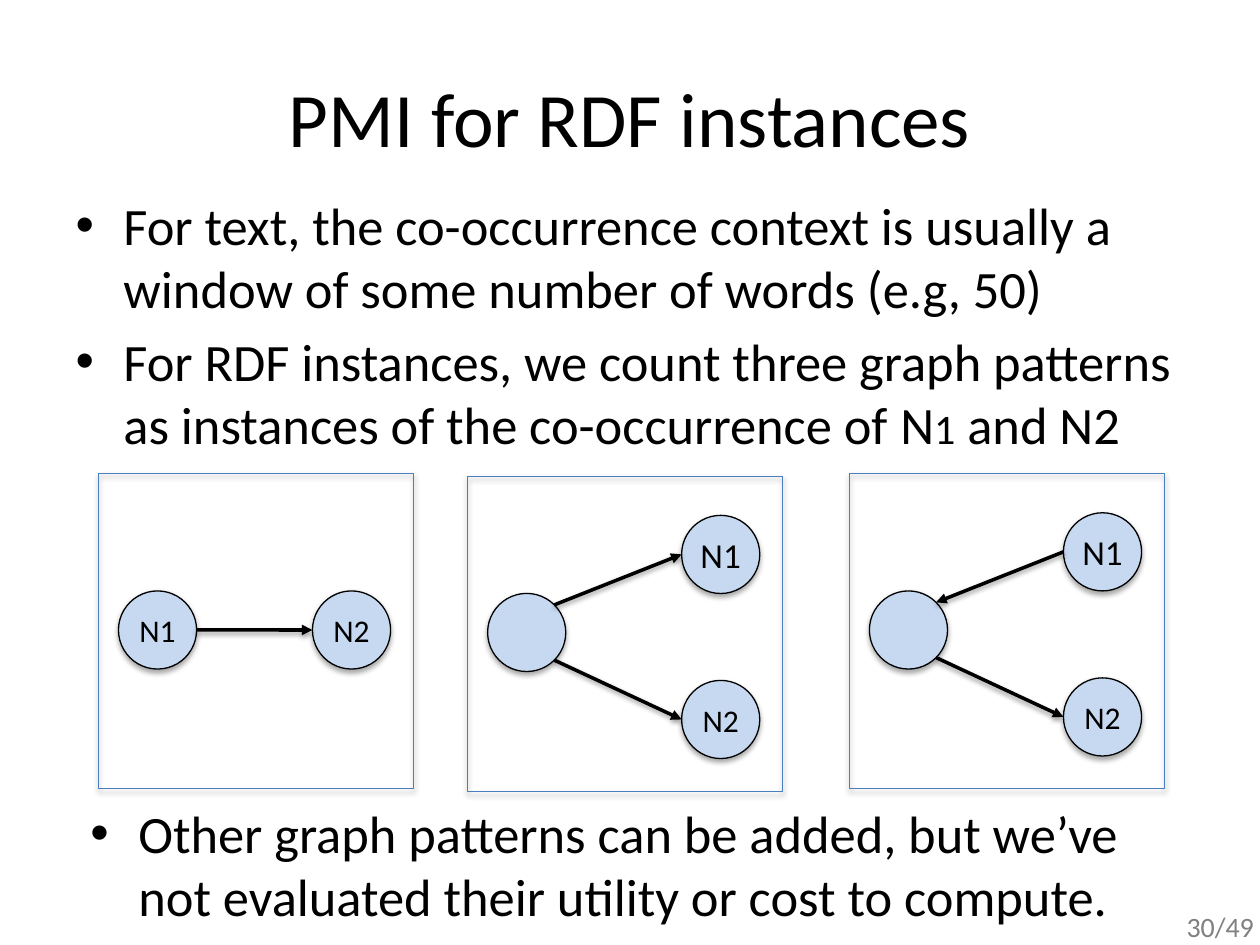
"""Build a slide on PMI graph patterns for RDF instances."""
import math

import lxml.etree
import pptx
import pptx.dml.color
import pptx.enum.shapes
import pptx.enum.text
import pptx.oxml.ns
import pptx.util

Inches, Pt = pptx.util.Inches, pptx.util.Pt
SHAPE = pptx.enum.shapes.MSO_SHAPE
ALIGN = pptx.enum.text.PP_ALIGN
ANCHOR = pptx.enum.text.MSO_ANCHOR
qn = pptx.oxml.ns.qn

THEME = {
    "font": "Calibri", "ink": "000000", "grey": "808080", "node": "C6D9F1", "frame": "4B7EBC",
    "title": 44, "body": 30, "label": 18, "large_label": 20, "page": 16,
    "thin": 0.75, "arrow": 2, "indent": 0.38,
}

TITLE = "PMI for RDF instances"
BULLETS = [
    [("For text, the co-occurrence context is usually a window of some number of words (e.g, 50)", False)],
    [("For RDF instances, we count three graph patterns as instances of the co-occurrence of ", False),
     ("N1", True), (" and N2", False)],
]
CLOSING = [[("Other graph patterns can be added, but we’ve not evaluated their utility or cost to compute.", False)]]
PAGE = "30/49"

PANEL, NODE = 2.5, 0.62
LEFT, RIGHT = 0.16, 1.7
TOP, MIDDLE, BOTTOM = 0.31, 0.93, 1.62
FORK = {"hub": (LEFT, MIDDLE, "", "label"), "N1": (RIGHT, TOP, "N1", "large_label"),
        "N2": (RIGHT, BOTTOM, "N2", "label")}
PAIR = {"N1": (LEFT, MIDDLE, "N1", "label"), "N2": (RIGHT, MIDDLE, "N2", "label")}
HUB_UP, HUB_DOWN, N1_IN, N2_IN = ("hub", -45), ("hub", 45), ("N1", 180), ("N2", 180)
PATTERNS = [
    (0.78, 3.76, PAIR, [(("N1", 0), N2_IN)]),
    (3.71, 3.78, FORK, [(HUB_UP, N1_IN), (HUB_DOWN, N2_IN)]),
    (6.74, 3.76, FORK, [(N1_IN, HUB_UP), (HUB_DOWN, N2_IN)]),
]


def color(name):
    return pptx.dml.color.RGBColor.from_string(THEME[name])


def add_run(paragraph, text, size, ink="ink"):
    run = paragraph.add_run()
    run.text = text
    for name, value in {"name": THEME["font"], "size": Pt(THEME[size])}.items():
        setattr(run.font, name, value)
    run.font.color.rgb = color(ink)
    return run


def place(shape, *box):
    for name, value in zip(("left", "top", "width", "height"), box):
        setattr(shape, name, Inches(value))


def fill_bullets(frame, items):
    frame.word_wrap = True
    frame.auto_size = pptx.enum.text.MSO_AUTO_SIZE.NONE
    for index, runs in enumerate(items):
        paragraph = frame.paragraphs[0] if index == 0 else frame.add_paragraph()
        properties = paragraph._p.get_or_add_pPr()
        indent = Inches(THEME["indent"])
        properties.set("marL", str(indent))
        properties.set("indent", str(-indent))
        before = lxml.etree.SubElement(properties, qn("a:spcBef"))
        lxml.etree.SubElement(before, qn("a:spcPct")).set("val", "20000")
        lxml.etree.SubElement(properties, qn("a:buFont")).set("typeface", "Arial")
        lxml.etree.SubElement(properties, qn("a:buChar")).set("char", "•")
        for text, small_caps in runs:
            run = add_run(paragraph, text, "body")
            if small_caps:
                run._r.get_or_add_rPr().set("cap", "small")


def add_shadow(shape, distance, opacity):
    effects = lxml.etree.SubElement(shape._element.spPr, qn("a:effectLst"))
    shadow = lxml.etree.SubElement(effects, qn("a:outerShdw"), blurRad=str(Pt(3.1)),
                                   dist=str(Pt(distance)), dir="5400000", rotWithShape="0")
    ink = lxml.etree.SubElement(shadow, qn("a:srgbClr"), val=THEME["ink"])
    lxml.etree.SubElement(ink, qn("a:alpha"), val=str(opacity * 1000))


def add_outlined(slide, kind, left, top, side, line, fill=None):
    shape = slide.shapes.add_shape(kind, *map(Inches, (left, top, side, side)))
    shape.line.color.rgb = color(line)
    shape.line.width = Pt(THEME["thin"])
    if fill:
        shape.fill.solid()
        shape.fill.fore_color.rgb = color(fill)
    else:
        shape.fill.background()
    add_shadow(shape, 1.8, 35)
    return shape


def add_node(slide, left, top, text, size):
    frame = add_outlined(slide, SHAPE.OVAL, left, top, NODE, "ink", "node").text_frame
    frame.margin_left = frame.margin_right = 0
    frame.vertical_anchor = ANCHOR.MIDDLE
    if text:
        frame.paragraphs[0].alignment = ALIGN.CENTER
        add_run(frame.paragraphs[0], text, size)


def add_arrow(slide, start, end):
    arrow = slide.shapes.add_connector(pptx.enum.shapes.MSO_CONNECTOR.STRAIGHT, *map(Inches, start + end))
    arrow.line.color.rgb = color("ink")
    arrow.line.width = Pt(THEME["arrow"])
    lxml.etree.SubElement(arrow.line._get_or_add_ln(), qn("a:tailEnd"), type="triangle")
    add_shadow(arrow, 1.6, 38)


def add_pattern(slide, left, top, nodes, edges):
    add_outlined(slide, SHAPE.RECTANGLE, left, top, PANEL, "frame")
    for x, y, text, size in nodes.values():
        add_node(slide, left + x, top + y, text, size)

    def port(name, degrees):
        x, y = nodes[name][:2]
        angle, radius = math.radians(degrees), NODE / 2
        return (left + x + radius * (1 + math.cos(angle)), top + y + radius * (1 + math.sin(angle)))

    for start, end in edges:
        add_arrow(slide, port(*start), port(*end))


def main():
    presentation = pptx.Presentation()
    presentation.slide_width, presentation.slide_height = Inches(10), Inches(7.5)
    slide = presentation.slides.add_slide(presentation.slide_layouts[1])

    title, body = slide.placeholders
    place(title, 0.5, 0.3, 9, 1.25)
    title.text_frame.vertical_anchor = ANCHOR.MIDDLE
    title.text_frame.paragraphs[0].alignment = ALIGN.CENTER
    add_run(title.text_frame.paragraphs[0], TITLE, "title")
    place(body, 0.5, 1.48, 9, 2.23)
    fill_bullets(body.text_frame, BULLETS)

    for pattern in PATTERNS:
        add_pattern(slide, *pattern)

    closing = slide.shapes.add_textbox(*map(Inches, (0.62, 6.31, 9, 1.27)))
    fill_bullets(closing.text_frame, CLOSING)
    page = slide.shapes.add_textbox(*map(Inches, (8.86, 7.17, 1.19, 0.4))).text_frame
    page.word_wrap = True
    page.paragraphs[0].alignment = ALIGN.RIGHT
    add_run(page.paragraphs[0], PAGE, "page", "grey")
    presentation.save("out.pptx")


if __name__ == "__main__":
    main()
